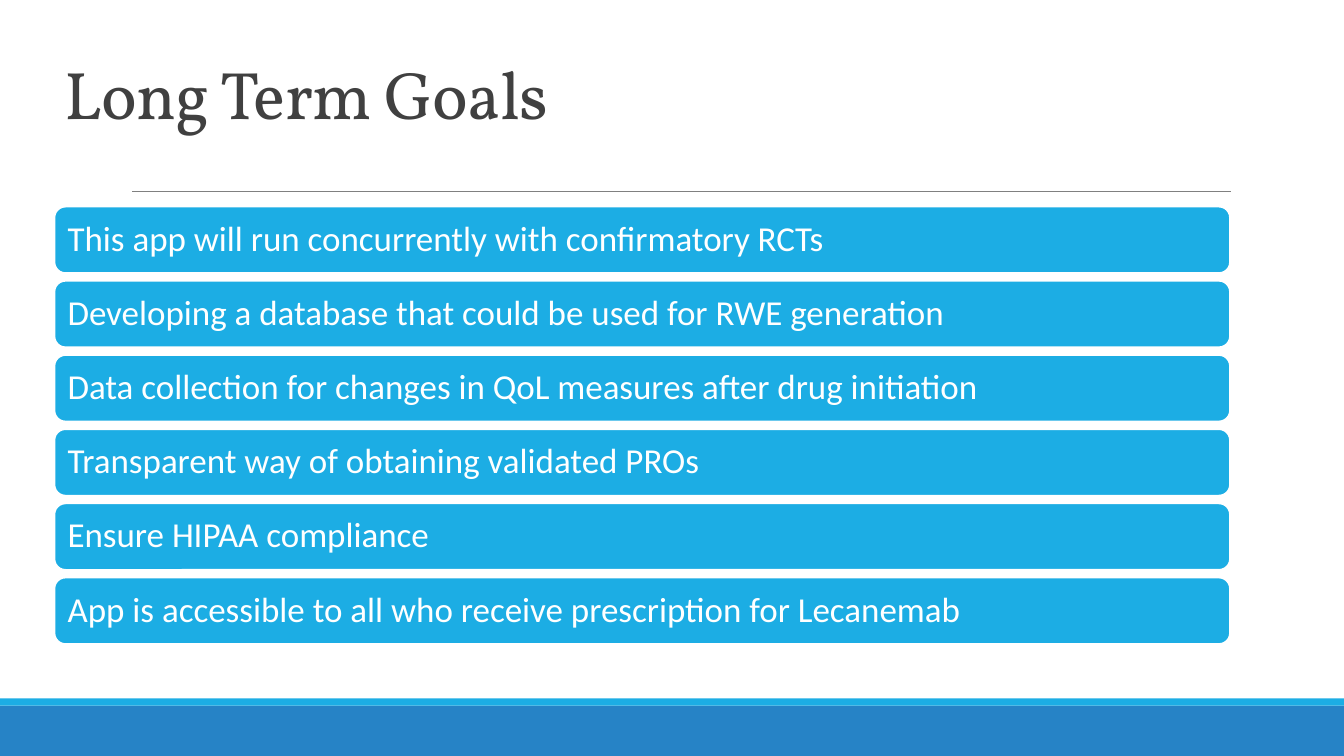
import pptx
import pptx.dml.color
import pptx.enum.shapes
import pptx.enum.text
import pptx.oxml
import pptx.util

Inches = pptx.util.Inches
Pt = pptx.util.Pt
RGBColor = pptx.dml.color.RGBColor
Shape = pptx.enum.shapes.MSO_SHAPE
Anchor = pptx.enum.text.MSO_ANCHOR

# Content
TITLE = "Long Term Goals"
GOALS = [
    "This app will run concurrently with confirmatory RCTs",
    "Developing a database that could be used for RWE generation",
    "Data collection for changes in QoL measures after drug initiation",
    "Transparent way of obtaining validated PROs",
    "Ensure HIPAA compliance",
    "App is accessible to all who receive prescription for Lecanemab",
]

# Colours and layout
WHITE = RGBColor(0xFF, 0xFF, 0xFF)
SKY = RGBColor(0x1C, 0xAD, 0xE4)
BLUE = RGBColor(0x26, 0x83, 0xC6)
GREY = RGBColor(0x80, 0x80, 0x80)
CHARCOAL = RGBColor(0x40, 0x40, 0x40)
PAGE_WIDTH, PAGE_HEIGHT = 13.33, 7.5
LEFT, WIDTH = 0.54, 11.66
FIRST_TOP, LAST_TOP, BAR_HEIGHT = 2.05, 5.73, 0.66
FOOTER_BANDS = [(7, 0.5, BLUE), (6.93, 0.07, SKY)]


def add_filled(page, kind, left, top, width, height, colour):
    shape = page.shapes.add_shape(
        kind, Inches(left), Inches(top), Inches(width), Inches(height))
    shape.shadow.inherit = False
    shape.fill.solid()
    shape.fill.fore_color.rgb = colour
    shape.line.fill.background()
    return shape


def write(frame, text, font, size, colour, spacing, anchor):
    frame.word_wrap = True
    frame.vertical_anchor = anchor
    para = frame.paragraphs[0]
    para.alignment = pptx.enum.text.PP_ALIGN.LEFT
    para.line_spacing = spacing
    span = para.add_run()
    span.text = text
    span.font.name = font
    span.font.size = Pt(size)
    span.font.color.rgb = colour
    return span


deck = pptx.Presentation()
deck.slide_width = Inches(PAGE_WIDTH)
deck.slide_height = Inches(PAGE_HEIGHT)
page = deck.slides.add_slide(deck.slide_layouts[5])
page.background.fill.solid()
page.background.fill.fore_color.rgb = WHITE

# Footer bands
for top, height, colour in FOOTER_BANDS:
    add_filled(page, Shape.RECTANGLE, 0, top, PAGE_WIDTH, height, colour)

# Rule under the title
rule = page.shapes.add_connector(
    pptx.enum.shapes.MSO_CONNECTOR.STRAIGHT,
    Inches(1.31), Inches(1.9), Inches(12.21), Inches(1.9))
rule.line.color.rgb = GREY
rule.line.width = Pt(0.5)
rule._element.spPr.append(pptx.oxml.parse_xml(
    '<a:effectLst xmlns:a="http://schemas.openxmlformats.org/drawingml/2006/main"/>'))

# Title
title = page.shapes.title
title.left, title.top = Inches(LEFT), Inches(0.31)
title.width, title.height = Inches(WIDTH), Inches(1.06)
span = write(title.text_frame, TITLE, "Vollkorn", 48, CHARCOAL, 0.85, Anchor.BOTTOM)
span.font._element.set("spc", "-50")

# Goal bars, evenly spaced
pitch = (LAST_TOP - FIRST_TOP) / (len(GOALS) - 1)
for index, goal in enumerate(GOALS):
    bar = add_filled(page, Shape.ROUNDED_RECTANGLE, LEFT,
                     FIRST_TOP + index * pitch, WIDTH, BAR_HEIGHT, SKY)
    bar.line.color.rgb = WHITE
    bar.line.width = Pt(1.25)
    write(bar.text_frame, goal, "Calibri", 25, WHITE, 0.9, Anchor.MIDDLE)

deck.save("out.pptx")
